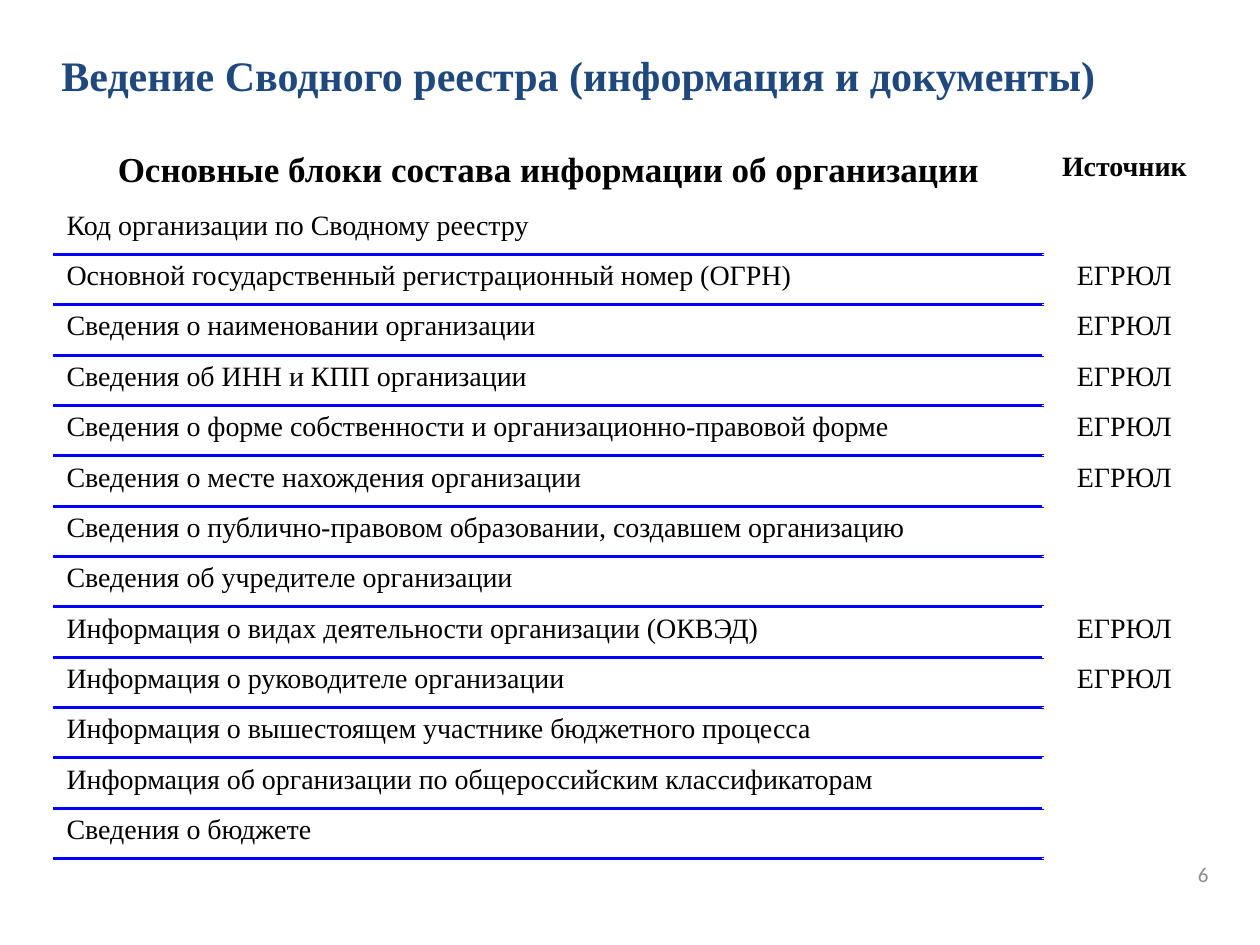
from lxml.etree import SubElement
from pptx import Presentation
from pptx.dml.color import RGBColor
from pptx.enum.text import MSO_ANCHOR, PP_ALIGN
from pptx.oxml.ns import qn
from pptx.util import Emu, Pt

EMU_PER_PX = 914400 / 126
SERIF = "Times New Roman"
REGISTRY = "ЕГРЮЛ"
HEADER = ("Основные блоки состава информации об организации", "Источник")
ROWS = [
    ("Код организации по Сводному реестру", ""),
    ("Основной государственный регистрационный номер (ОГРН)", REGISTRY),
    ("Сведения о наименовании организации", REGISTRY),
    ("Сведения об ИНН и КПП организации", REGISTRY),
    ("Сведения о форме собственности и организационно-правовой форме", REGISTRY),
    ("Сведения о месте нахождения организации", REGISTRY),
    ("Сведения о публично-правовом образовании, создавшем организацию", ""),
    ("Сведения об учредителе организации", ""),
    ("Информация о видах деятельности организации (ОКВЭД)", REGISTRY),
    ("Информация о руководителе организации", REGISTRY),
    ("Информация о вышестоящем участнике бюджетного процесса", ""),
    ("Информация об организации по общероссийским классификаторам", ""),
    ("Сведения о бюджете", ""),
]


def px(length):
    """Turn pixels into EMU."""
    return Emu(round(length * EMU_PER_PX))


def color(value):
    """Turn a hex string into a colour."""
    return RGBColor.from_string(value)


def write(frame, text, size, hue="000000", font=SERIF, bold=False, align=PP_ALIGN.LEFT):
    """Write one styled paragraph into a text frame."""
    para = frame.paragraphs[0]
    para.alignment = align
    para.font.size = Pt(size)
    para.font.name = font
    para.font.bold = bold
    para.font.color.rgb = color(hue)
    if text:
        para.add_run().text = text


def add_text(slide, area, text, size, **style):
    """Add a wrapped text box centred vertically."""
    box = slide.shapes.add_textbox(*map(px, area))
    box.text_frame.word_wrap = True
    box.text_frame.vertical_anchor = MSO_ANCHOR.MIDDLE
    write(box.text_frame, text, size, **style)


def add_border(cell, side, hue="0000FF", width=2):
    """Draw a solid line along one side of a cell."""
    line = SubElement(cell._tc.get_or_add_tcPr(), qn(f"a:{side}"), w=str(Pt(width)))
    SubElement(SubElement(line, qn("a:solidFill")), qn("a:srgbClr"), val=hue)


def fill_cell(cell, text, size, borders=(), **style):
    """Fill a transparent cell with text and border lines."""
    cell.margin_bottom = 0
    for side in borders:
        add_border(cell, side)
    cell.fill.background()
    write(cell.text_frame, text, size, **style)


def add_registry_table(slide):
    """Add the table of information blocks and their sources."""
    widths, header_height, body_height = (989, 163), 59, 655
    area = (54, 145, sum(widths), header_height + body_height)
    table = slide.shapes.add_table(len(ROWS) + 1, 2, *map(px, area)).table
    table.first_row = table.horz_banding = False
    for column, width in zip(table.columns, widths):
        column.width = px(width)
    table.rows[0].height = px(header_height)
    for index, (text, size) in enumerate(zip(HEADER, (20, 16))):
        fill_cell(table.cell(0, index), text, size, bold=True, align=PP_ALIGN.CENTER)
    for number, (block, source) in enumerate(ROWS, start=1):
        table.rows[number].height = px(body_height / len(ROWS))
        borders = ("lnB",) if number == 1 else ("lnT", "lnB")
        fill_cell(table.cell(number, 0), block, 16, borders)
        fill_cell(table.cell(number, 1), source, 16, align=PP_ALIGN.CENTER)


def main():
    """Build and save the deck."""
    deck = Presentation()
    deck.slide_width, deck.slide_height = px(1260), px(945)
    slide = deck.slides.add_slide(deck.slide_layouts[6])
    add_text(slide, (49, 35, 1077, 79), HEADING, 24, hue="1F497D", bold=True)
    add_text(slide, (927, 849, 294, 50), "6", 12, hue="8C8C8C", font="Calibri",
             align=PP_ALIGN.RIGHT)
    add_registry_table(slide)
    deck.save("out.pptx")


HEADING = "Ведение Сводного реестра (информация и документы)"

if __name__ == "__main__":
    main()
